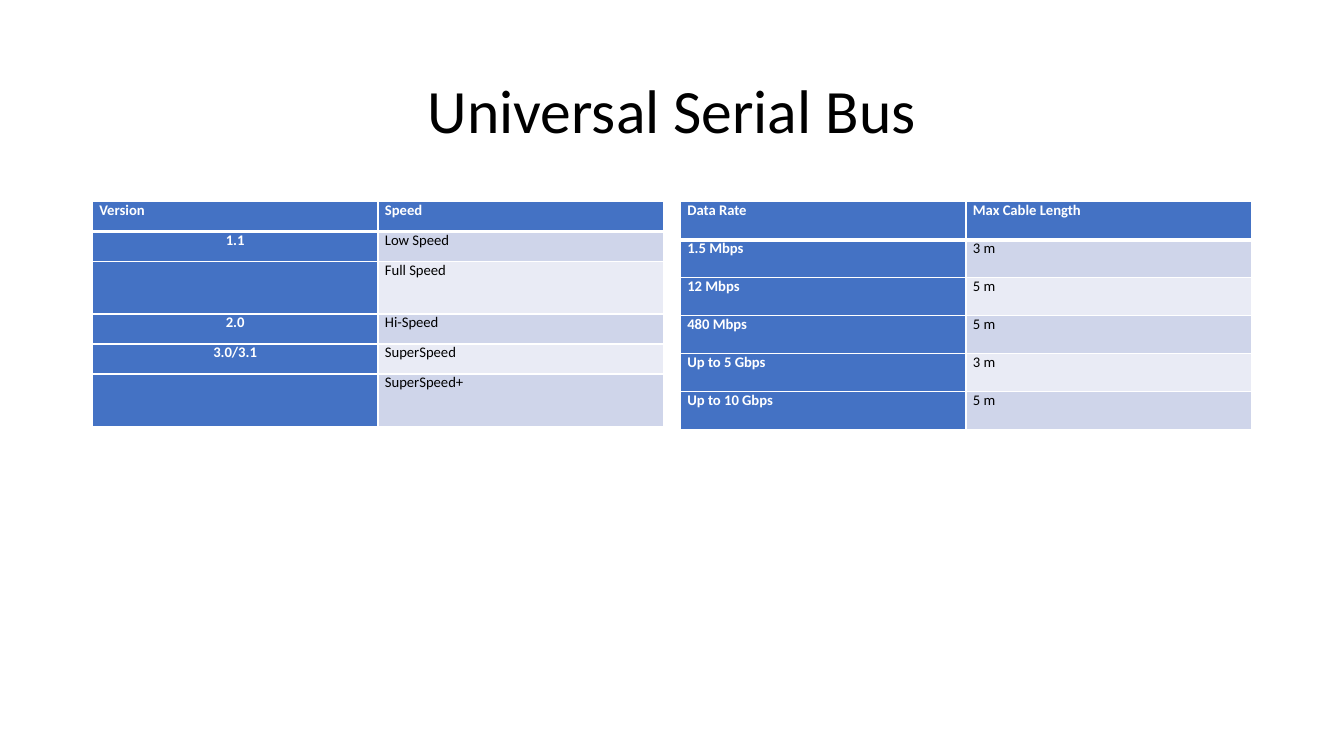
from dataclasses import dataclass

import lxml.etree
import pptx
import pptx.dml.color
import pptx.enum.text
import pptx.oxml.ns
import pptx.presentation
import pptx.slide
import pptx.table
import pptx.text.text
import pptx.util

Pt = pptx.util.Pt
RGBColor = pptx.dml.color.RGBColor
PP_ALIGN = pptx.enum.text.PP_ALIGN
qn = pptx.oxml.ns.qn

BLUE = RGBColor(0x44, 0x72, 0xC4)
BAND_DARK = RGBColor(0xCF, 0xD5, 0xEA)
BAND_LIGHT = RGBColor(0xE9, 0xEB, 0xF5)
WHITE = RGBColor(0xFF, 0xFF, 0xFF)
BLACK = RGBColor(0x00, 0x00, 0x00)

FONT = "Calibri"
LEFT, CONTENT_WIDTH = 66, 828
TABLE_TOP, TABLE_WIDTH = 144, 408


@dataclass(frozen=True)
class TableSpec:
    left: float
    heights: list[float]
    rows: list[tuple[str, str]]
    key_align: PP_ALIGN


SHORT, TALL, EVEN = 21.4, 37.6, 27.2

TABLES = [
    TableSpec(
        LEFT,
        [SHORT, SHORT, TALL, SHORT, SHORT, TALL],
        [
            ("Version", "Speed"),
            ("1.1", "Low Speed"),
            ("", "Full Speed"),
            ("2.0", "Hi-Speed"),
            ("3.0/3.1", "SuperSpeed"),
            ("", "SuperSpeed+"),
        ],
        PP_ALIGN.CENTER,
    ),
    TableSpec(
        LEFT + CONTENT_WIDTH - TABLE_WIDTH,
        [EVEN] * 6,
        [
            ("Data Rate", "Max Cable Length"),
            ("1.5 Mbps", "3 m"),
            ("12 Mbps", "5 m"),
            ("480 Mbps", "5 m"),
            ("Up to 5 Gbps", "3 m"),
            ("Up to 10 Gbps", "5 m"),
        ],
        PP_ALIGN.LEFT,
    ),
]


def style_font(font: pptx.text.text.Font, size: float, color: RGBColor, bold: bool) -> None:
    font.name = FONT
    font.size = Pt(size)
    font.bold = bold
    font.color.rgb = color


def set_borders(cell: pptx.table._Cell, row: int) -> None:
    """White rules, with a heavier one between header and body."""
    tcPr = cell._tc.get_or_add_tcPr()
    widths = {"L": 1, "R": 1, "T": 3 if row == 1 else 1, "B": 3 if row == 0 else 1}
    for side, width in widths.items():
        ln = lxml.etree.SubElement(tcPr, qn(f"a:ln{side}"), w=str(Pt(width)))
        fill = lxml.etree.SubElement(ln, qn("a:solidFill"))
        lxml.etree.SubElement(fill, qn("a:srgbClr"), val=str(WHITE))


def fill_cell(cell: pptx.table._Cell, text: str, row: int, col: int, align: PP_ALIGN) -> None:
    strong = row == 0 or col == 0
    set_borders(cell, row)
    cell.fill.solid()
    cell.fill.fore_color.rgb = BLUE if strong else BAND_DARK if row % 2 else BAND_LIGHT
    cell.margin_left = cell.margin_right = Pt(5)
    cell.margin_top = cell.margin_bottom = 0
    p = cell.text_frame.paragraphs[0]
    p.text = text
    p.alignment = align
    for r in p.runs:
        style_font(r.font, 10.5, WHITE if strong else BLACK, strong)


def add_table(s: pptx.slide.Slide, spec: TableSpec) -> None:
    gf = s.shapes.add_table(
        len(spec.rows), 2, Pt(spec.left), Pt(TABLE_TOP), Pt(TABLE_WIDTH), Pt(sum(spec.heights))
    )
    table = gf.table
    for i, (height, texts) in enumerate(zip(spec.heights, spec.rows)):
        table.rows[i].height = Pt(height)
        for j, text in enumerate(texts):
            align = spec.key_align if i > 0 and j == 0 else PP_ALIGN.LEFT
            fill_cell(table.cell(i, j), text, i, j, align)


def add_title(s: pptx.slide.Slide, text: str) -> None:
    sp = s.shapes.add_textbox(Pt(LEFT), Pt(28.75), Pt(CONTENT_WIDTH), Pt(104.4))
    tf = sp.text_frame
    tf.word_wrap = True
    tf.vertical_anchor = pptx.enum.text.MSO_ANCHOR.MIDDLE
    p = tf.paragraphs[0]
    p.text = text
    p.alignment = PP_ALIGN.CENTER
    p.line_spacing = 0.9
    style_font(p.runs[0].font, 44, BLACK, False)


def main() -> None:
    prs = pptx.Presentation()
    prs.slide_width, prs.slide_height = Pt(960), Pt(540)
    s = prs.slides.add_slide(prs.slide_layouts[6])

    # Title
    add_title(s, "Universal Serial Bus")

    # Side-by-side tables
    for spec in TABLES:
        add_table(s, spec)

    prs.save("out.pptx")


if __name__ == "__main__":
    main()
